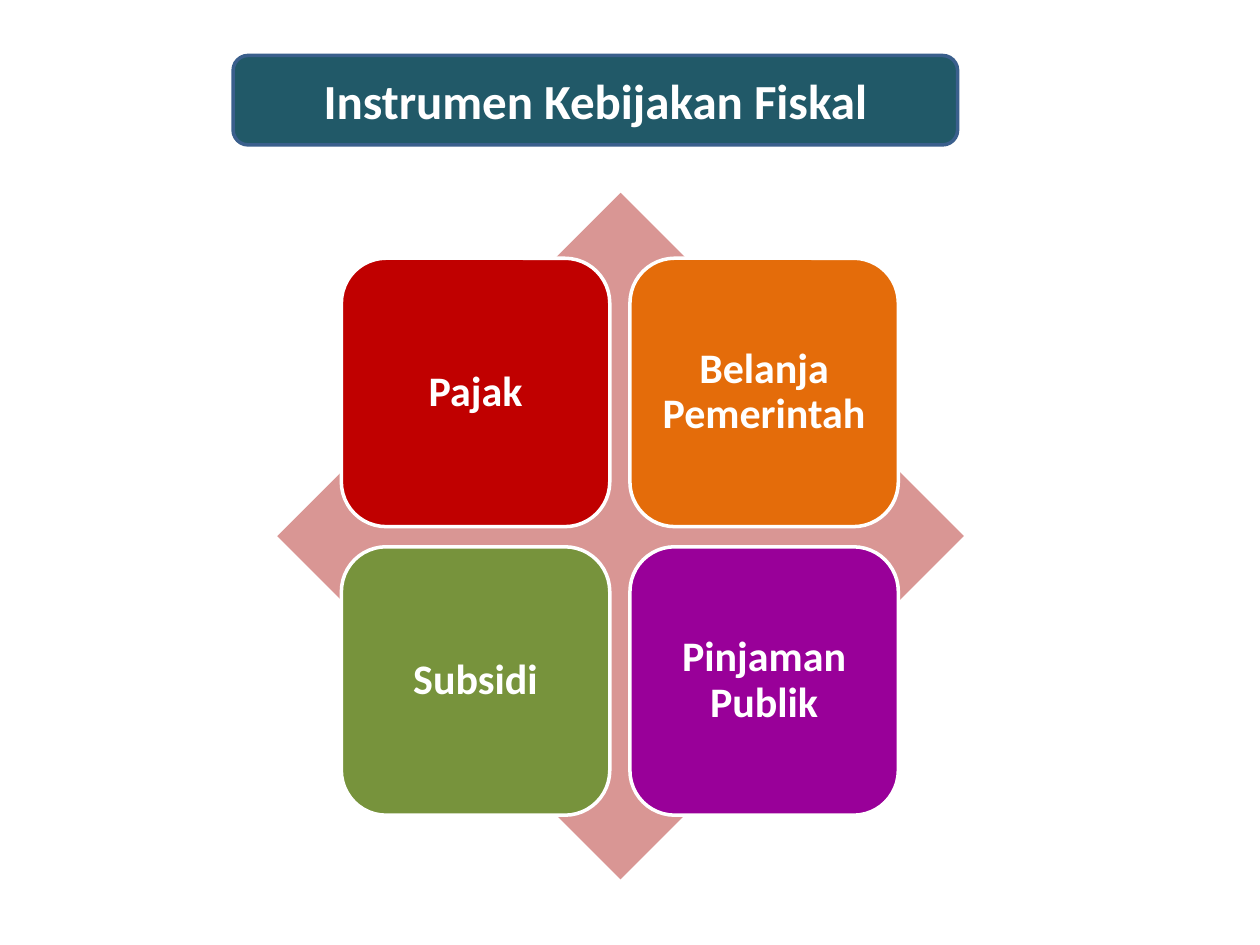
from pptx import Presentation
from pptx.dml.color import RGBColor
from pptx.enum.shapes import MSO_SHAPE
from pptx.enum.text import MSO_ANCHOR, PP_ALIGN
from pptx.util import Inches, Pt

DIAMOND = MSO_SHAPE.DIAMOND
ROUNDED = MSO_SHAPE.ROUNDED_RECTANGLE
CENTER = PP_ALIGN.CENTER
MIDDLE = MSO_ANCHOR.MIDDLE

prs = Presentation()
prs.slide_width = Inches(10)
prs.slide_height = Inches(7.5)
s = prs.slides.add_slide(prs.slide_layouts[6])


def rgb(value):
    return RGBColor.from_string(value)


def add_box(left, top, width, height, fill, line, text, size):
    sp = s.shapes.add_shape(ROUNDED, Inches(left), Inches(top), Inches(width), Inches(height))
    sp.shadow.inherit = False
    sp.fill.solid()
    sp.fill.fore_color.rgb = rgb(fill)
    sp.line.color.rgb = rgb(line)
    sp.line.width = Pt(2)
    tf = sp.text_frame
    tf.word_wrap = True
    tf.vertical_anchor = MIDDLE
    tf.text = text
    p = tf.paragraphs[0]
    p.alignment = CENTER
    font = p.runs[0].font
    font.name = "Calibri"
    font.size = Pt(size)
    font.bold = True
    font.color.rgb = rgb("FFFFFF")
    return sp


# Diamond behind the four instruments
diamond = s.shapes.add_shape(DIAMOND, Inches(2.2), Inches(1.53), Inches(5.45), Inches(5.45))
diamond.shadow.inherit = False
diamond.fill.solid()
diamond.fill.fore_color.rgb = rgb("D99694")
diamond.line.fill.background()

# Two-by-two grid of instruments
LEFT, TOP, SIDE, STEP = 2.71, 2.05, 2.13, 2.29
instruments = [
    ("Pajak", "C00000"),
    ("Belanja Pemerintah", "E46C0A"),
    ("Subsidi", "77933C"),
    ("Pinjaman Publik", "990099"),
]
for i, (name, color) in enumerate(instruments):
    row, col = divmod(i, 2)
    box = add_box(LEFT + col * STEP, TOP + row * STEP, SIDE, SIDE, color, "FFFFFF", name, 24)
    tf = box.text_frame
    tf.margin_left = tf.margin_right = tf.margin_top = tf.margin_bottom = Inches(0)
    tf.paragraphs[0].line_spacing = 0.9

# Title
add_box(1.85, 0.44, 5.75, 0.71, "215968", "3A5F8C", "Instrumen Kebijakan Fiskal", 28)

prs.save("out.pptx")
